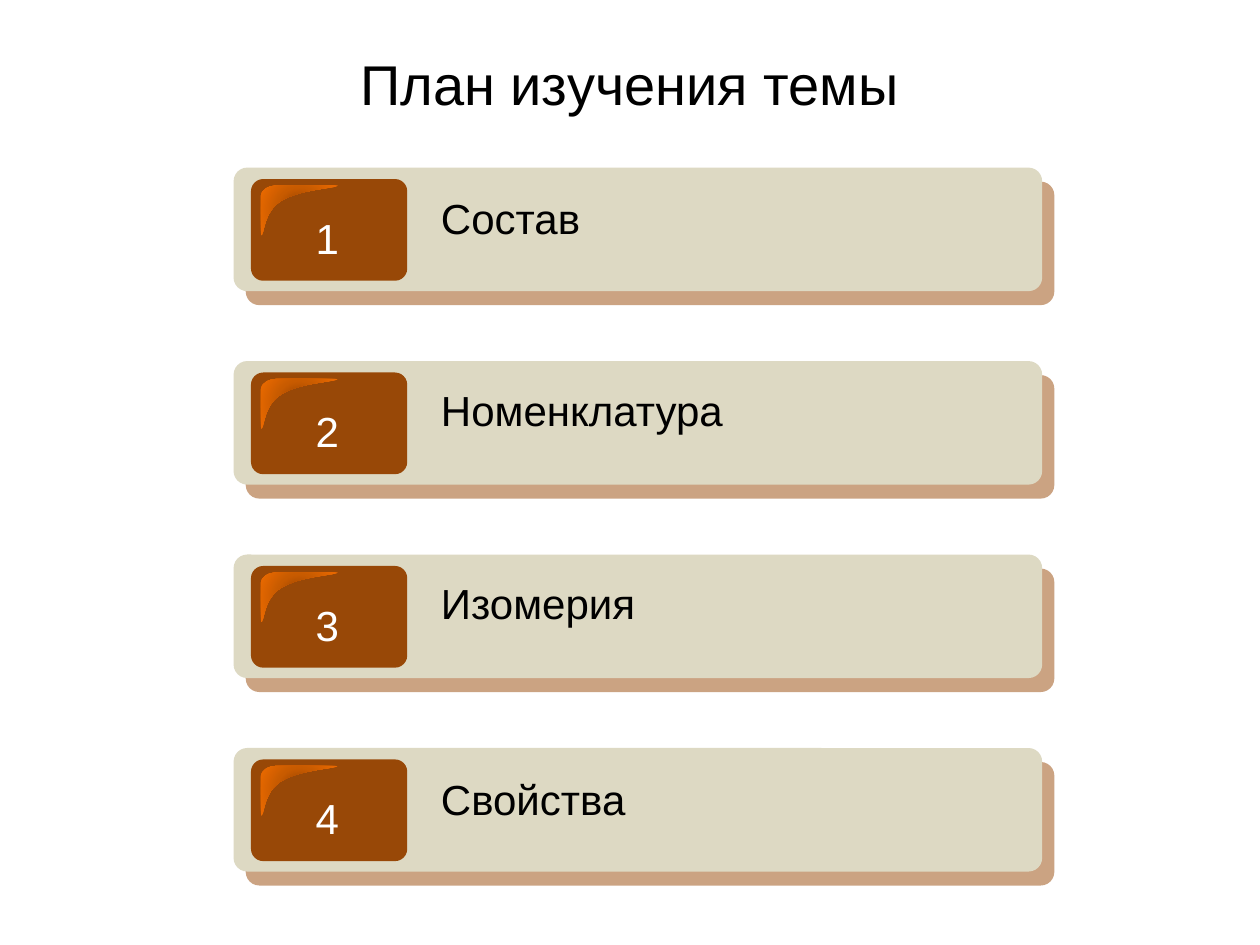
import lxml.etree
import pptx
import pptx.dml.color
import pptx.enum.shapes
import pptx.enum.text
import pptx.oxml
import pptx.oxml.ns
import pptx.util
from pptx.util import Cm


class Theme:
    font = "Arial"
    title_size, text_size = 32, 24
    text, number = "000000", "FFFFFF"
    card, badge = "DDD9C3", "984807"
    gloss = {0: "8D4000", 50: "C85B00", 100: "EE6B00"}


qn = pptx.oxml.ns.qn
NAMESPACE = pptx.oxml.ns.nsdecls("a")
SHADOW = f"""<a:effectLst {NAMESPACE}>
  <a:outerShdw blurRad="0" dist="134620" dir="2940000" algn="ctr" rotWithShape="0">
    <a:srgbClr val="{Theme.badge}"><a:alpha val="50000"/></a:srgbClr>
  </a:outerShdw></a:effectLst>"""
STOPS = "".join(f'<a:gs pos="{place * 1000}"><a:srgbClr val="{color}"/></a:gs>'
                for place, color in Theme.gloss.items())
GLOSS_FILL = f"""<a:gradFill {NAMESPACE} rotWithShape="1"><a:gsLst>{STOPS}</a:gsLst>
  <a:path path="circle"><a:fillToRect l="50000" t="50000" r="50000" b="50000"/></a:path>
</a:gradFill>"""

# Outline of the highlight, in cm from its top left corner
GLOSS_CORNERS = [(0.3, 0), (0, 0.2), (0, 1.01), (0.43, 0.3), (1.55, 0)]
# Control points of the curve that ends at the corner with this index
GLOSS_CONTROLS = {
    1: [(0.15, 0), (0, 0.1)],
    3: [(0.08, 1.02), (0.03, 0.53)],
    4: [(0.81, 0.07), (1.57, 0.05)],
}


def add_text(shape, wording, size, color, centred=True, wrap=True):
    frame = shape.text_frame
    frame.word_wrap = wrap
    para = frame.paragraphs[0]
    if centred:
        para.alignment = pptx.enum.text.PP_ALIGN.CENTER
    span = para.add_run()
    span.text = wording
    span.font.name = Theme.font
    span.font.size = pptx.util.Pt(size)
    span.font.color.rgb = pptx.dml.color.RGBColor.from_string(color)
    return frame


def add_rounded(shapes, area, rounding, color=None):
    shape = shapes.add_shape(pptx.enum.shapes.MSO_SHAPE.ROUNDED_RECTANGLE, *map(Cm, area))
    shape.adjustments[0] = rounding
    shape.shadow.inherit = False
    shape.line.fill.background()
    if color:
        shape.fill.solid()
        shape.fill.fore_color.rgb = pptx.dml.color.RGBColor.from_string(color)
    else:
        shape.fill.background()
    return shape


deck = pptx.Presentation()
deck.slide_width, deck.slide_height = Cm(25.4), Cm(19.05)
page = deck.slides.add_slide(deck.slide_layouts[6])

FIRST_TOP, PITCH = 3.38, 3.9
LABEL_TOPS = {"Состав": 3.75, "Номенклатура": 7.62, "Изомерия": 11.51, "Свойства": 15.47}
for index, (topic, label_top) in enumerate(LABEL_TOPS.items()):
    top = FIRST_TOP + index * PITCH
    row = page.shapes.add_group_shape().shapes

    card = add_rounded(row, (4.71, top, 16.3, 2.49), 0.11, Theme.card)
    effects = card._element.spPr.find(qn("a:effectLst"))
    effects.getparent().replace(effects, pptx.oxml.parse_xml(SHADOW))

    add_rounded(row, (5.06, top + 0.23, 3.15, 2.05), 0.12, Theme.badge)

    outline = [(Cm(5.26 + x), Cm(top + 0.36 + y)) for x, y in GLOSS_CORNERS]
    builder = row.build_freeform(*outline[0])
    builder.add_line_segments(outline[1:], close=True)
    gloss = builder.convert_to_shape()
    gloss.shadow.inherit = False
    gloss.line.fill.background()
    gloss.fill.gradient()
    properties = gloss._element.spPr
    properties.replace(properties.find(qn("a:gradFill")), pptx.oxml.parse_xml(GLOSS_FILL))
    segments = list(properties.iter(qn("a:lnTo")))
    for corner, controls in GLOSS_CONTROLS.items():
        segment = segments[corner - 1]
        curve = lxml.etree.Element(qn("a:cubicBezTo"))
        for x, y in controls:
            lxml.etree.SubElement(curve, qn("a:pt"), x=str(int(Cm(x))), y=str(int(Cm(y))))
        segment.getparent().replace(segment, curve)
        curve.append(segment[0])

    number_box = row.add_textbox(Cm(6.1), Cm(top + 0.78), Cm(1), Cm(1.28))
    number = add_text(number_box, str(index + 1), Theme.text_size, Theme.number, wrap=False)
    label_box = row.add_textbox(Cm(8.64), Cm(label_top), Cm(12), Cm(1.28))
    label = add_text(label_box, topic, Theme.text_size, Theme.text, centred=False)
    for frame in (number, label):
        frame.auto_size = pptx.enum.text.MSO_AUTO_SIZE.SHAPE_TO_FIT_TEXT

title_box = add_rounded(page.shapes, (4.96, 0.76, 15.47, 1.83), 0.17)
title = add_text(title_box, "План изучения темы", Theme.title_size, Theme.text)
title.vertical_anchor = pptx.enum.text.MSO_ANCHOR.MIDDLE

deck.save("out.pptx")
